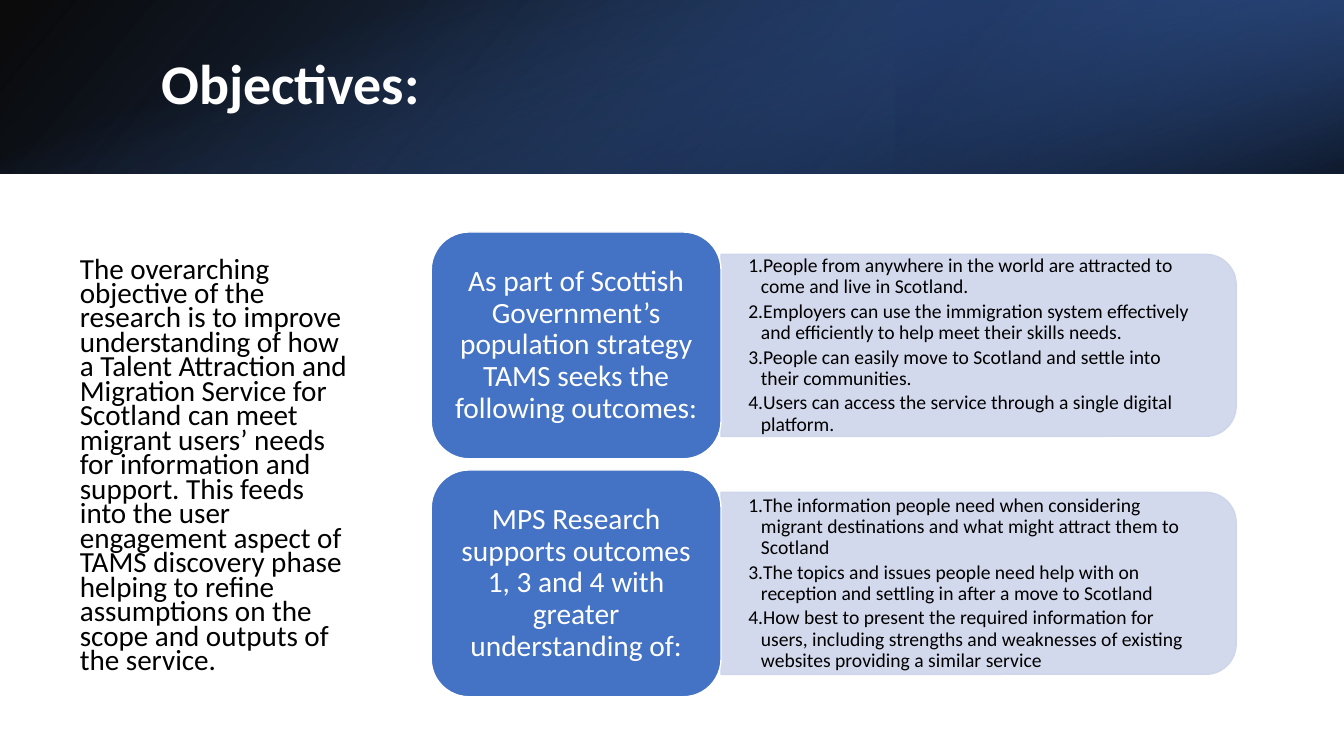
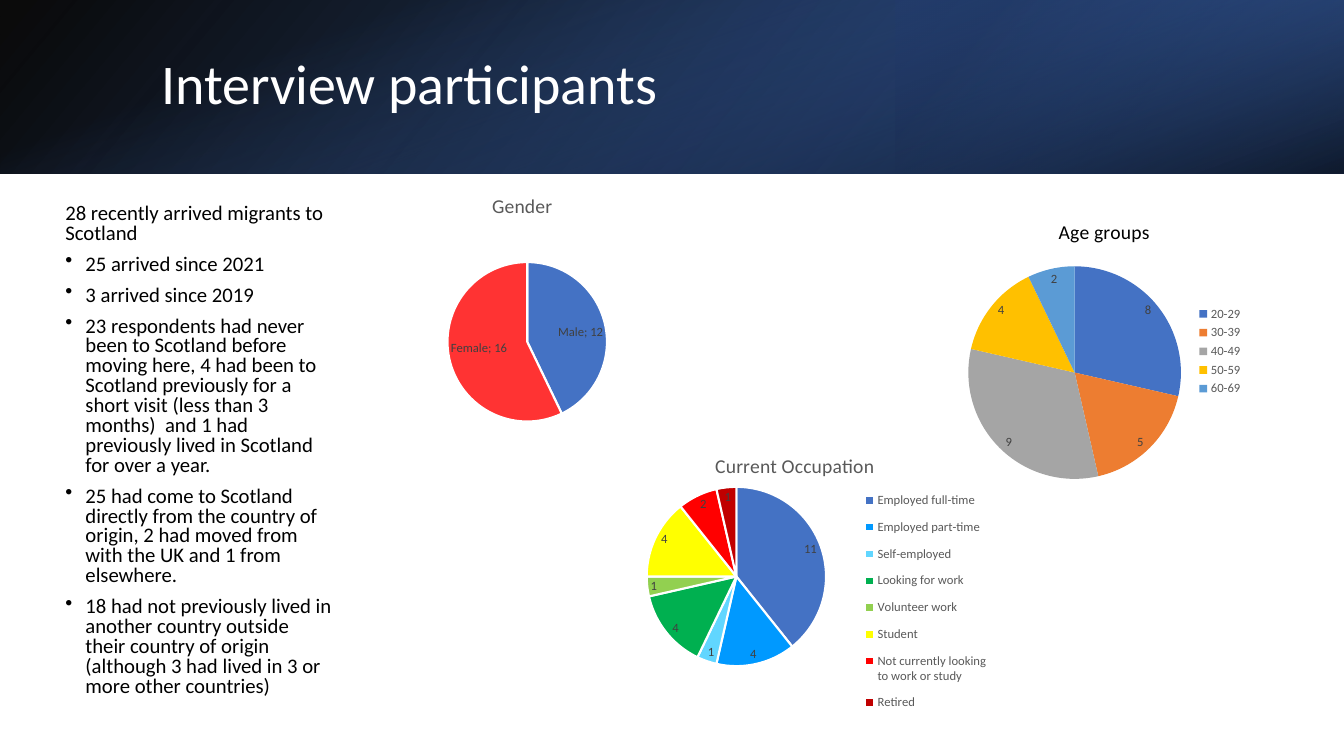
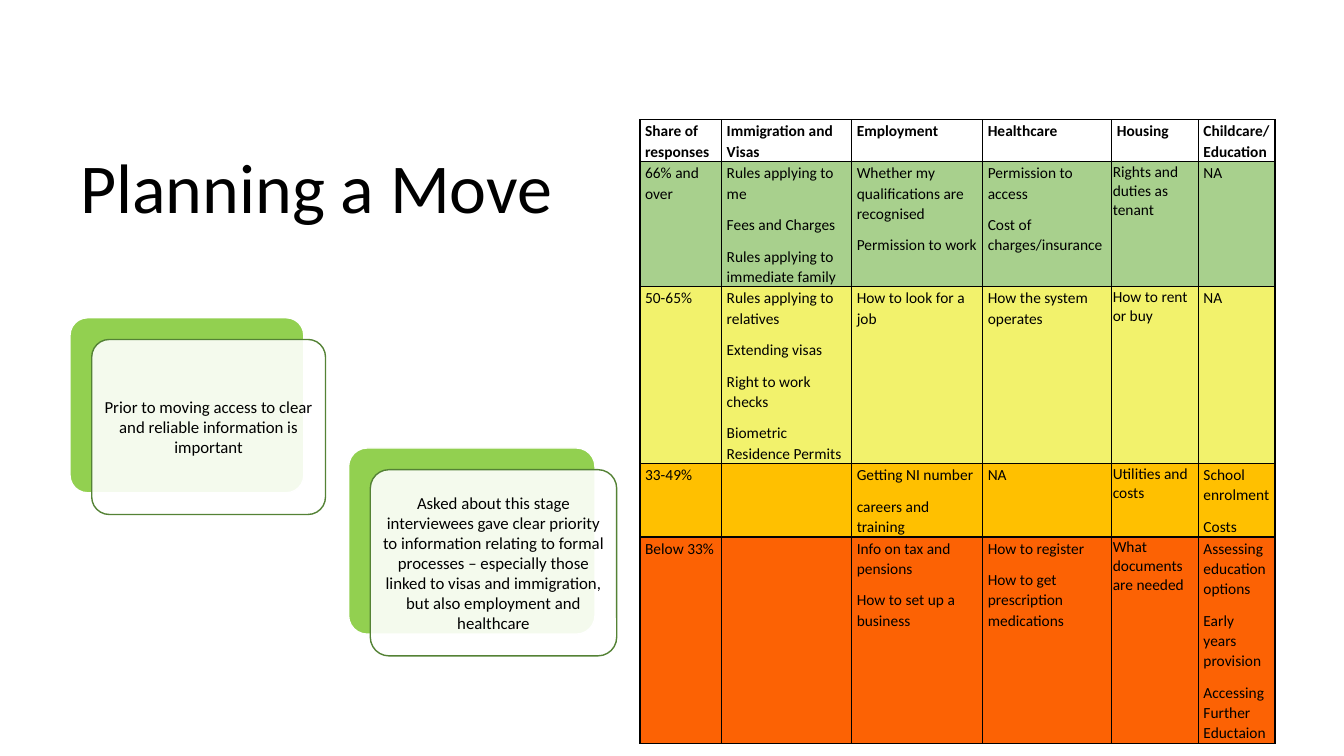
from lxml.etree import SubElement
from pptx import Presentation
from pptx.chart.data import CategoryChartData
from pptx.dml.color import RGBColor
from pptx.enum.chart import XL_CHART_TYPE, XL_LABEL_POSITION, XL_LEGEND_POSITION
from pptx.enum.shapes import MSO_SHAPE
from pptx.enum.text import MSO_ANCHOR, MSO_AUTO_SIZE, PP_ALIGN
from pptx.oxml.ns import qn
from pptx.util import Pt

FONT = "Calibri"
HEX = {
    "black": "000000", "white": "FFFFFF", "blue": "4472C4", "deep": "2F5597",
    "navy": "203864", "pale": "CFD5EA", "lime": "92D050", "moss": "548235",
    "grey": "595959", "dark": "404040", "orange": "ED7D31", "silver": "A5A5A5",
    "gold": "FFC000", "sky": "5B9BD5", "coral": "FF3333", "azure": "0099FF",
    "aqua": "61D6FF", "green": "00B050", "yellow": "FFFF00", "red": "FF0000",
    "wine": "C00000", "sage": "A8D08D", "lemon": "F2F26C", "flame": "FC6204",
}
INSET = (7.2, 3.6, 7.2, 3.6)
SIDES = ("left", "top", "right", "bottom")


def tint(name):
    return RGBColor.from_string(HEX[name])


def pts(box):
    return [Pt(n) for n in box]


def put(obj, vals):
    for key, val in vals.items():
        setattr(obj, key, val)


def font(obj, size, col, bold=False):
    put(obj, {"name": FONT, "size": Pt(size), "bold": bold})
    obj.color.rgb = tint(col)


def fade(shape, alphas):
    """Give the fill colours of a shape their opacity in percent."""
    for clr, val in zip(shape._element.spPr.iter(qn("a:srgbClr")), alphas):
        SubElement(clr, qn("a:alpha"), val=str(val * 1000))


def mark(para, sign, dent):
    """Bullet for a string, numbering from that value for an integer."""
    ppr = para._p.get_or_add_pPr()
    ppr.set("marL", str(Pt(dent)))
    ppr.set("indent", str(-Pt(dent)))
    if isinstance(sign, str):
        SubElement(ppr, qn("a:buChar"), char=sign)
    else:
        num = SubElement(ppr, qn("a:buAutoNum"), type="arabicPeriod")
        if sign > 1:
            num.set("startAt", str(sign))


def place(node, spot, box, inner=False):
    """Manual layout of a chart part, in shares of the chart."""
    for old in node.findall(qn("c:layout")):
        node.remove(old)
    lay = node.makeelement(qn("c:layout"), {})
    node.insert(spot, lay)
    man = SubElement(lay, qn("c:manualLayout"))
    if inner:
        SubElement(man, qn("c:layoutTarget"), val="inner")
    for tag in ("xMode", "yMode"):
        SubElement(man, qn("c:" + tag), val="edge")
    for tag, val in zip("xywh", box):
        SubElement(man, qn("c:" + tag), val=str(val))


class Deck:
    def __init__(self):
        self.file = Presentation()
        put(self.file, {"slide_width": Pt(960), "slide_height": Pt(540)})
        self.page = None

    def start(self, title, box, size=40, col="white", bold=False,
              anchor=MSO_ANCHOR.MIDDLE, band=True):
        self.page = self.file.slides.add_slide(self.file.slide_layouts[5])
        if band:
            self.band()
        head = self.page.shapes.title
        put(head, dict(zip(("left", "top", "width", "height"), pts(box))))
        self.words(head.text_frame, [title], size, col, bold, anchor=anchor, line=0.9)

    def band(self):
        # box, rotation, flip, angle, stops of (position, colour, opacity)
        for box, turn, flip, ang, stops in (
            ((0, 0, 960, 124), 0, True, 140,
             ((0, "black", 96), (1, "deep", 100))),
            ((640, 0, 320, 124), 180, True, 320,
             ((0.19, "navy", 68), (1, "blue", 79))),
            ((418, -418, 124, 960), 90, False, 340,
             ((0.23, "blue", 0), (0.99, "black", 74))),
        ):
            shape = self.shape(MSO_SHAPE.RECTANGLE, box, "blue", turn=turn)
            shape.fill.gradient()
            shape.fill.gradient_angle = 360 - ang
            for stop, (pos, col, _) in zip(shape.fill.gradient_stops, stops):
                stop.position = pos
                stop.color.rgb = tint(col)
            fade(shape, [stop[2] for stop in stops])
            if flip:
                shape._element.spPr.xfrm.set("flipH", "1")
            # Keep the band behind the title
            tree = self.page.shapes._spTree
            tree.remove(shape._element)
            tree.insert(tree.index(self.page.shapes.title._element), shape._element)

    def shape(self, kind, box, fill, line=None, turn=0, alpha=None, adj=None):
        shape = self.page.shapes.add_shape(kind, *pts(box))
        shape.shadow.inherit = False
        shape.rotation = turn
        shape.fill.solid()
        shape.fill.fore_color.rgb = tint(fill)
        if alpha:
            fade(shape, [alpha])
        if line:
            shape.line.color.rgb = tint(line)
            shape.line.width = Pt(1)
        else:
            shape.line.fill.background()
        if adj:
            shape.adjustments[0] = adj
        return shape

    def words(self, frame, texts, size, col="black", bold=False, align=PP_ALIGN.LEFT,
              anchor=MSO_ANCHOR.MIDDLE, inset=INSET, line=1.0, before=0, after=0,
              marks=(), dent=0):
        put(frame, {"word_wrap": True, "auto_size": MSO_AUTO_SIZE.NONE,
                    "vertical_anchor": anchor})
        put(frame, {"margin_" + s: Pt(n) for s, n in zip(SIDES, inset)})
        self.paras(frame, texts, size, col, bold, alignment=align, line_spacing=line,
                   space_before=Pt(before), space_after=Pt(after))
        for para, sign in zip(frame.paragraphs, marks):
            if sign:
                mark(para, sign, dent)

    def paras(self, frame, texts, size, col, bold, **form):
        for i, text in enumerate(texts):
            para = frame.add_paragraph() if i else frame.paragraphs[0]
            para.text = text
            put(para, form)
            for run in para.runs:
                font(run.font, size, col, bold)

    def text(self, box, texts, size, **form):
        frame = self.page.shapes.add_textbox(*pts(box)).text_frame
        self.words(frame, texts, size, **form)

    def pie(self, box, title, cats, vals, cols, plot, spot, col="grey", edge=True,
            names=False, legend=None, area=None):
        data = CategoryChartData()
        data.categories = cats
        data.add_series("Series 1", vals)
        chart = self.page.shapes.add_chart(XL_CHART_TYPE.PIE, *pts(box), data).chart
        font(chart.font, 10, "black")
        # Title and plot
        chart.has_title = True
        self.paras(chart.chart_title.text_frame, [title], 14, col, False)
        place(chart.chart_title._element, 1, spot)
        place(chart._chartSpace.chart.plotArea, 0, plot, True)
        # Legend
        chart.has_legend = bool(legend)
        if legend:
            put(chart.legend, {"position": legend, "include_in_layout": False})
            font(chart.legend.font, 9, "grey")
            if area:
                place(chart.legend._element, 1, area)
        # Slices and labels
        pie = chart.plots[0]
        put(pie, {"vary_by_categories": True, "has_data_labels": True})
        put(pie.data_labels, {"show_value": True, "show_percentage": False,
                              "show_category_name": names,
                              "position": XL_LABEL_POSITION.BEST_FIT})
        font(pie.data_labels.font, 9, "dark")
        for i, name in enumerate(cols):
            form = pie.series[0].points[i].format
            form.fill.solid()
            form.fill.fore_color.rgb = tint(name)
            if edge:
                form.line.color.rgb = tint("white")
                form.line.width = Pt(1.5)
            else:
                form.line.fill.background()

    def table(self, left, top, wide, high, rows, fills):
        grid = self.page.shapes.add_table(
            len(high), len(wide), *pts((left, top, sum(wide), sum(high)))).table
        put(grid, {"first_row": False, "horz_banding": False})
        for col, n in zip(grid.columns, wide):
            col.width = Pt(n)
        for row, n in zip(grid.rows, high):
            row.height = Pt(n)
        for r, (texts, fill) in enumerate(zip(rows, fills)):
            for c, text in enumerate(texts):
                self.cell(grid.cell(r, c), text, fill, r == 0, r > 0 and c == 4)

    def cell(self, cell, text, fill, head, tight):
        gap = 0.7 if tight else 3.6
        put(cell, {"margin_" + s: Pt(n) for s, n in zip(SIDES, (gap, 0.7, gap, 0))})
        tcpr = cell._tc.get_or_add_tcPr()
        for side in "LRTB":
            line = SubElement(tcpr, qn("a:ln" + side), w=str(Pt(1)))
            paint = SubElement(line, qn("a:solidFill"))
            SubElement(paint, qn("a:srgbClr"), val=HEX["black"])
        cell.fill.solid()
        cell.fill.fore_color.rgb = tint(fill)
        if text:
            self.paras(cell.text_frame, text.split("|"), 11, "black", head,
                       line_spacing=1.0 if tight else 1.07,
                       space_after=Pt(0 if tight else 8))


def goals(deck):
    deck.start("Objectives:", (108, 27, 790, 69), bold=True)
    blocks = (
        ("As part of Scottish Government’s population strategy TAMS seeks the "
         "following outcomes:", (1, 1, 1, 1),
         ("People from anywhere in the world are attracted to come and live in Scotland.",
          "Employers can use the immigration system effectively and efficiently to help "
          "meet their skills needs.",
          "People can easily move to Scotland and settle into their communities.",
          "Users can access the service through a single digital platform.")),
        ("MPS Research supports outcomes 1, 3 and 4 with greater understanding of:",
         (1, 3, 4),
         ("The information people need when considering migrant destinations and what "
          "might attract them to Scotland",
          "The topics and issues people need help with on reception and settling in "
          "after a move to Scotland",
          "How best to present the required information for users, including strengths "
          "and weaknesses of existing websites providing a similar service")),
    )
    for i, (lead, marks, items) in enumerate(blocks):
        mid = 246.7 + 170 * i
        deck.shape(MSO_SHAPE.ROUND_2_SAME_RECTANGLE, (634, mid - 184, 130, 368),
                   "pale", "pale", turn=90, alpha=90)
        deck.text((515, mid - 58.5, 361, 117), items, 14, inset=(19.5, 10, 19.5, 10),
                  line=0.9, after=2.5, marks=marks, dent=9)
        box = deck.shape(MSO_SHAPE.ROUNDED_RECTANGLE, (308, mid - 81, 207, 162),
                         "blue", "white")
        deck.words(box.text_frame, [lead], 21, "white", align=PP_ALIGN.CENTER,
                   inset=(6.3, 3.2, 6.3, 3.2), line=0.9)
    deck.text((50, 168, 208, 332), [
        "The overarching objective of the research is to improve understanding of how a "
        "Talent Attraction and Migration Service for Scotland can meet migrant users’ "
        "needs for information and support. This feeds into the user engagement aspect "
        "of TAMS discovery phase helping to refine assumptions on the scope and outputs "
        "of the service."], 20.8, line=0.7, before=9.6)


def people(deck):
    deck.start("Interview participants", (108, 27, 790, 69))
    deck.text((39.6, 142.5, 204.5, 379), [
        "28 recently arrived migrants to Scotland",
        "25 arrived since 2021",
        "3 arrived since 2019",
        "23 respondents had never been to Scotland before moving here, 4 had been to "
        "Scotland previously for a short visit (less than 3 months)  and 1 had "
        "previously lived in Scotland for over a year.",
        "25 had come to Scotland directly from the country of origin, 2 had moved from "
        "with the UK and 1 from elsewhere.",
        "18 had not previously lived in another country outside their country of origin "
        "(although 3 had lived in 3 or more other countries)",
    ], 14.8, anchor=MSO_ANCHOR.TOP, line=0.8, before=7.9,
        marks=[None] + ["•"] * 5, dent=14.4)
    deck.pie((681, 142.5, 214, 217), "Age groups",
             ("20-29", "30-39", "40-49", "50-59", "60-69"), (8, 5, 9, 4, 2),
             ("blue", "orange", "silver", "gold", "sky"),
             (0.05, 0.22, 0.71, 0.7), (0.34, 0.05), col="black", edge=False,
             legend=XL_LEGEND_POSITION.RIGHT)
    deck.pie((209, 124.5, 325.5, 210), "Gender", ("Male", "Female"), (12, 16),
             ("blue", "coral"), (0.34, 0.26, 0.35, 0.62), (0.43, 0.05), names=True)
    deck.pie((420, 310, 294.5, 210), "Current Occupation",
             ("Employed full-time", "Employed part-time", "Self-employed",
              "Looking for work", "Volunteer work", "Student",
              "Not currently looking to work or study", "Retired"),
             (11, 4, 1, 4, 1, 4, 2, 1),
             ("blue", "azure", "aqua", "green", "lime", "yellow", "red", "wine"),
             (0.13, 0.18, 0.46, 0.61), (0.3, 0.05),
             legend=XL_LEGEND_POSITION.BOTTOM, area=(0.67, 0.16, 0.3, 0.82))


def move(deck):
    deck.start("Planning a Move", (50, 50, 379, 117), 50, "black",
               anchor=MSO_ANCHOR.BOTTOM, band=False)
    # Cards, each in front of a green plate
    for x, y, w, h, note in (
        (50, 227, 167, 125,
         "Prior to moving access to clear and reliable information is important"),
        (249, 320, 176, 133,
         "Asked about this stage interviewees gave clear priority to information "
         "relating to formal processes – especially those linked to visas and "
         "immigration, but also employment and healthcare"),
    ):
        deck.shape(MSO_SHAPE.ROUNDED_RECTANGLE, (x, y, w, h), "lime", "white", adj=0.1)
        card = deck.shape(MSO_SHAPE.ROUNDED_RECTANGLE, (x + 15.5, y + 15.5, w, h),
                          "white", "moss", alpha=90, adj=0.1)
        deck.words(card.text_frame, [note], 12, align=PP_ALIGN.CENTER, inset=[3.6] * 4)
    # Table of needs; a bar parts the paragraphs of a cell
    rows = (
        ("Share of responses", "Immigration and Visas", "Employment", "Healthcare",
         "Housing", "Childcare/\vEducation"),
        ("66% and over",
         "Rules applying to me|Fees and Charges|Rules applying to immediate family",
         "Whether my qualifications are recognised|Permission to work",
         "Permission to access|Cost of charges/insurance",
         "Rights and duties as tenant", "NA"),
        ("50-65%",
         "Rules applying to relatives|Extending visas|Right to work checks|"
         "Biometric Residence Permits",
         "How to look for a job", "How the system operates", "How to rent or buy", "NA"),
        ("33-49%", "", "Getting NI number|careers and training", "NA",
         "Utilities and costs", "School enrolment|Costs"),
        ("Below 33%", "", "Info on tax and pensions|How to set up a business",
         "How to register|How to get prescription medications",
         "What documents are needed",
         "Assessing education options|Early years provision|"
         "Accessing Further Eductaion"),
    )
    deck.table(457.2, 85.5, (58.3, 92.9, 93.6, 92.2, 61.9, 54.7),
               (30, 88.5, 126, 52.5, 147), rows,
               ("white", "sage", "lemon", "gold", "flame"))


def main():
    deck = Deck()
    for build in (goals, people, move):
        build(deck)
    deck.file.save("out.pptx")


if __name__ == "__main__":
    main()
